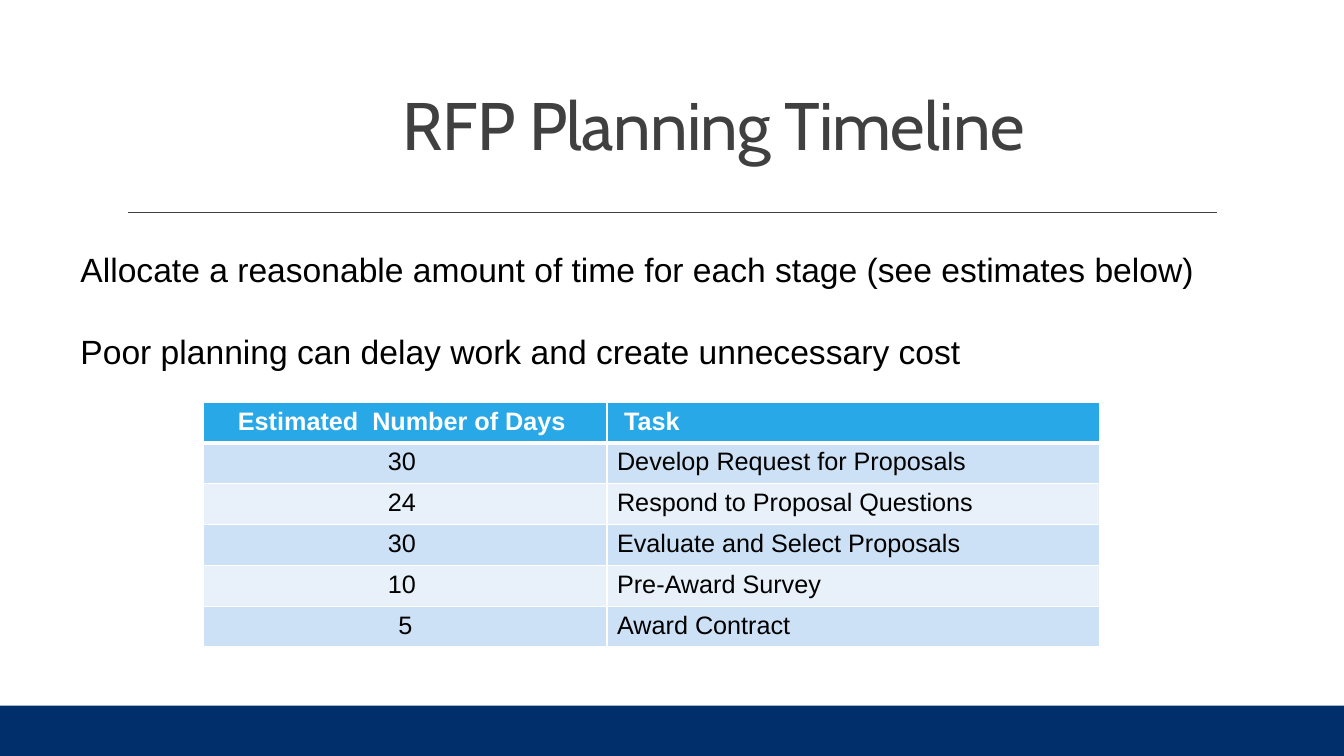
"""Build the RFP planning timeline slide."""
from lxml.etree import SubElement
from pptx import Presentation
from pptx.dml.color import RGBColor
from pptx.enum.shapes import MSO_CONNECTOR, MSO_SHAPE
from pptx.enum.text import MSO_ANCHOR, PP_ALIGN
from pptx.oxml.ns import qn
from pptx.util import Inches, Pt

NAVY = RGBColor(0x00, 0x2F, 0x6C)
GRAY = RGBColor(0x40, 0x40, 0x40)
BLACK = RGBColor(0x00, 0x00, 0x00)
WHITE = RGBColor(0xFF, 0xFF, 0xFF)
BLUE = RGBColor(0x29, 0xA8, 0xE7)
BANDS = [RGBColor(0xE8, 0xF1, 0xFA), RGBColor(0xCD, 0xE1, 0xF6)]


def write(para, text, size=18, font="Arial", color=BLACK, bold=False, align=PP_ALIGN.LEFT):
    para.alignment = align
    run = para.add_run()
    run.text = text
    run.font.size = Pt(size)
    run.font.name = font
    run.font.color.rgb = color
    run.font.bold = bold
    return run


def border(cell, side, width):
    line = SubElement(cell._tc.get_or_add_tcPr(), qn("a:" + side), w=str(Pt(width)))
    fill = SubElement(line, qn("a:solidFill"))
    SubElement(fill, qn("a:srgbClr"), val=str(WHITE))


deck = Presentation()
deck.slide_width = Inches(13.33)
deck.slide_height = Inches(7.5)
slide = deck.slides.add_slide(deck.slide_layouts[5])
shapes = slide.shapes

band = shapes.add_shape(MSO_SHAPE.RECTANGLE, 0, Inches(7), Inches(13.33), Inches(0.5))
band.shadow.inherit = False
band.fill.solid()
band.fill.fore_color.rgb = NAVY
band.line.fill.background()

rule = shapes.add_connector(
    MSO_CONNECTOR.STRAIGHT, Inches(1.27), Inches(2.11), Inches(12.07), Inches(2.11))
rule.line.color.rgb = GRAY
rule.line.width = Pt(1)
SubElement(rule._element.spPr, qn("a:effectLst"))

title = shapes.title
title.left, title.top = Inches(1.58), Inches(0.1)
title.width, title.height = Inches(11), Inches(1.59)
title.text_frame.vertical_anchor = MSO_ANCHOR.BOTTOM
head = title.text_frame.paragraphs[0]
head.line_spacing = 0.9
run = write(head, "RFP Planning Timeline", size=48, font="Cabin", color=GRAY, align=PP_ALIGN.CENTER)
run.font._element.set("spc", "-50")

body = shapes.add_textbox(Inches(0.7), Inches(2.42), Inches(12), Inches(1.3)).text_frame
body.word_wrap = True
write(body.paragraphs[0], "Allocate a reasonable amount of time\u00a0for each stage (see estimates below)", size=24)
para = body.add_paragraph()
para.space_before = Pt(29.5)
write(para, "Poor planning can delay work and create unnecessary cost", size=24)

rows = [
    ("Estimated  Number of Days ", " Task"),
    ("30 ", "Develop Request for Proposals"),
    ("24 ", "Respond to Proposal Questions"),
    ("30 ", "Evaluate and Select Proposals"),
    ("10 ", "Pre-Award Survey"),
    ("5", "Award Contract"),
]
table = shapes.add_table(
    len(rows), 2, Inches(2.02), Inches(3.99), Inches(8.89), Inches(2.43)).table
table.columns[0].width = Inches(4)
table.columns[1].width = Inches(4.89)
for r, row in enumerate(rows):
    top = r == 0
    for c, text in enumerate(row):
        cell = table.cell(r, c)
        for side in ("lnL", "lnR", "lnT", "lnB"):
            thick = (top and side == "lnB") or (r == 1 and side == "lnT")
            border(cell, side, 3 if thick else 1)
        cell.fill.solid()
        cell.fill.fore_color.rgb = BLUE if top else BANDS[r % 2]
        write(cell.text_frame.paragraphs[0], text, color=WHITE if top else BLACK, bold=top,
              align=PP_ALIGN.LEFT if c else PP_ALIGN.CENTER)

deck.save("out.pptx")
